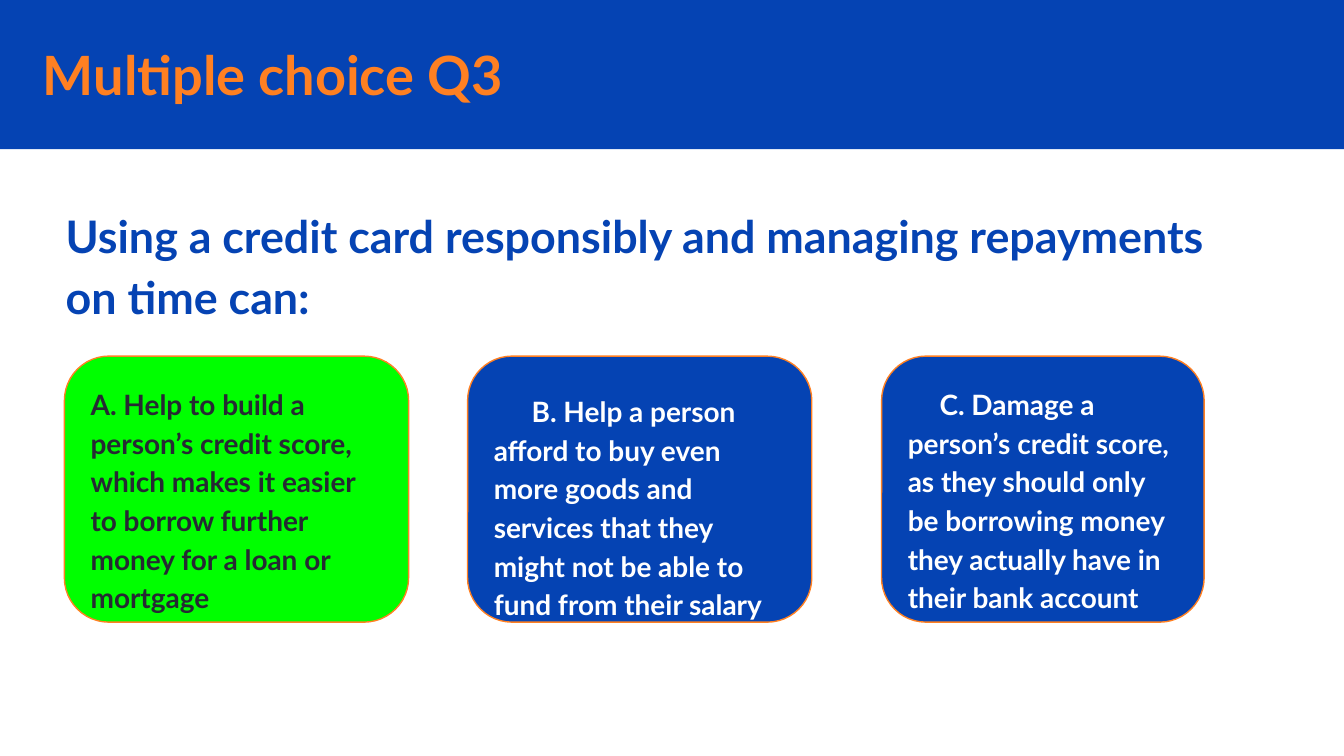
from pptx import Presentation
from pptx.dml.color import RGBColor
from pptx.enum.shapes import MSO_SHAPE
from pptx.enum.text import MSO_ANCHOR, PP_ALIGN
from pptx.util import Pt

RECT, ROUNDED = MSO_SHAPE.RECTANGLE, MSO_SHAPE.ROUNDED_RECTANGLE
TOP, MIDDLE, LEFT = MSO_ANCHOR.TOP, MSO_ANCHOR.MIDDLE, PP_ALIGN.LEFT
COLORS = {"blue": "0543B3", "orange": "FF8022", "green": "00FF00",
          "dark": "262A33", "white": "FFFFFF"}
INSET = 7.2


def color(name):
    """Return the named palette colour."""
    return RGBColor.from_string(COLORS[name])


def add_panel(slide, kind, box, fill):
    """Add a filled shape without shadow or outline."""
    panel = slide.shapes.add_shape(kind, *map(Pt, box))
    panel.shadow.inherit = False
    panel.fill.solid()
    panel.fill.fore_color.rgb = color(fill)
    panel.line.fill.background()
    return panel


def write(frame, words, size, ink, anchor=TOP, spacing=1.0, indent=0, drop=0):
    """Write one bold paragraph into a text frame."""
    layout = {"word_wrap": True, "vertical_anchor": anchor,
              "margin_left": Pt(INSET), "margin_right": Pt(INSET),
              "margin_top": Pt(INSET + drop), "margin_bottom": Pt(INSET)}
    for key, value in layout.items():
        setattr(frame, key, value)
    paragraph = frame.paragraphs[0]
    paragraph.text = words
    paragraph.alignment = LEFT
    paragraph.line_spacing = spacing
    if indent:
        paragraph._p.get_or_add_pPr().set("indent", str(Pt(indent)))
    font = paragraph.runs[0].font
    for key, value in {"name": "Lato", "size": Pt(size), "bold": True}.items():
        setattr(font, key, value)
    font.color.rgb = color(ink)


def add_header(slide, box):
    """Draw the title band."""
    left, top, width, height = box
    add_panel(slide, RECT, box, "blue")
    title = slide.shapes.add_textbox(
        Pt(left + 15.84), Pt(top + 19.44), Pt(width - 110), Pt(40.32))
    write(title.text_frame, "Multiple choice Q3", 29, "orange", MIDDLE)


def add_question(slide, box):
    """Write the question."""
    question = slide.shapes.add_textbox(*map(Pt, box))
    write(question.text_frame,
          "Using a credit card responsibly and managing repayments on time can:",
          24, "blue", spacing=1.15)


def add_answers(slide, box):
    """Draw the answer cards, the correct one in green."""
    left, top, width, height = box
    answers = [
        (0, 184.4, "green", "dark", 0, 0,
         "A. Help to build a person’s credit score, which makes it easier to "
         "borrow further money for a loan or mortgage"),
        (216, 184.4, "blue", "white", 20.3, 3.7,
         "B. Help a person afford to buy even more goods and services that "
         "they might not be able to fund from their salary"),
        (width - 172.8, 172.8, "blue", "white", 17, 0,
         "C. Damage a person’s credit score, as they should only be borrowing "
         "money they actually have in their bank account"),
    ]
    for offset, card_width, fill, ink, indent, drop, words in answers:
        card = add_panel(slide, ROUNDED,
                         (left + offset, top, card_width, height), fill)
        card.adjustments[0] = 0.167
        card.line.color.rgb = color("orange")
        card.line.width = Pt(0.75)
        write(card.text_frame, words, 15, ink, spacing=1.15,
              indent=indent, drop=drop)


def main():
    """Build and save the quiz slide."""
    deck = Presentation()
    deck.slide_width, deck.slide_height = Pt(720), Pt(405)
    slide = deck.slides.add_slide(deck.slide_layouts[6])
    add_header(slide, (0, 0, 720, 80))
    add_question(slide, (28.1, 100.1, 648.7, 77))
    add_answers(slide, (34.5, 190.8, 610.6, 142.5))
    deck.save("out.pptx")


if __name__ == "__main__":
    main()
